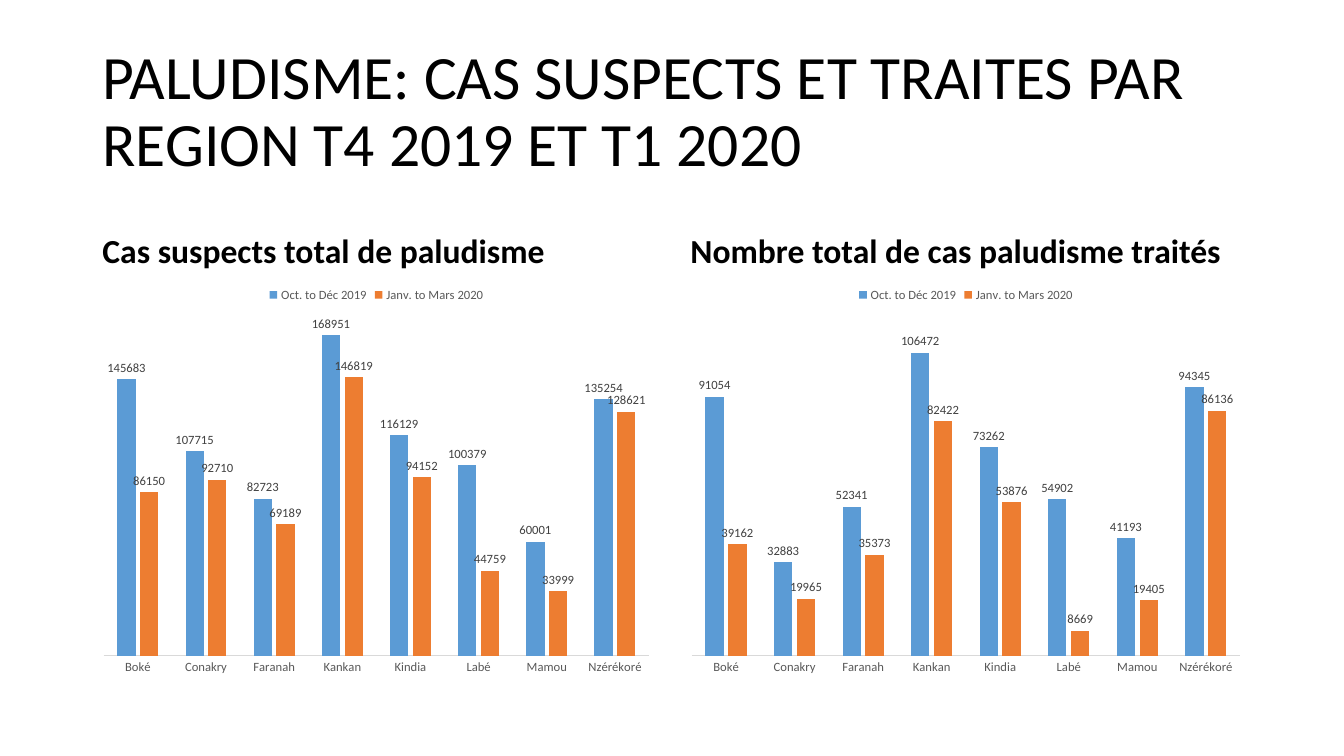
from dataclasses import dataclass

from pptx import Presentation
from pptx.chart.data import CategoryChartData
from pptx.dml.color import RGBColor
from pptx.enum.chart import XL_CHART_TYPE, XL_LABEL_POSITION, XL_LEGEND_POSITION, XL_TICK_MARK
from pptx.enum.text import MSO_ANCHOR, MSO_AUTO_SIZE, PP_ALIGN
from pptx.util import Emu, Pt


@dataclass(frozen=True)
class Theme:
    font: str = "Calibri"
    black: str = "000000"
    label: str = "404040"
    axis: str = "595959"
    line: str = "D9D9D9"
    bars: tuple = ("5B9BD5", "ED7D31")
    title_size: int = 44
    heading_size: int = 24
    chart_size: int = 10
    small_size: int = 9


THEME = Theme()
PX = 9525
REGIONS = ("Boké", "Conakry", "Faranah", "Kankan", "Kindia", "Labé", "Mamou", "Nzérékoré")
PERIODS = ("Oct. to Déc 2019", "Janv. to Mars 2020")
TITLE = "PALUDISME: CAS SUSPECTS ET TRAITES PAR REGION T4 2019 ET T1 2020"
PANELS = (
    (1, 88, 541, "Cas suspects total de paludisme", 180000, (
        (145683, 107715, 82723, 168951, 116129, 100379, 60001, 135254),
        (86150, 92710, 69189, 146819, 94152, 44759, 33999, 128621))),
    (3, 648, 544, "Nombre total de cas paludisme traités", 120000, (
        (91054, 32883, 52341, 106472, 73262, 54902, 41193, 94345),
        (39162, 19965, 35373, 82422, 53876, 8669, 19405, 86136))),
)


def px(*lengths):
    return [Emu(n * PX) for n in lengths]


def set_font(font, size, color, bold=False):
    font.name = THEME.font
    font.size = Pt(size)
    font.bold = bold
    font.color.rgb = RGBColor.from_string(color)


def fill_placeholder(sp, box, text, size, anchor, bold=False, before=0):
    sp.left, sp.top, sp.width, sp.height = px(*box)
    tf = sp.text_frame
    tf.text = text
    tf.word_wrap = True
    tf.auto_size = MSO_AUTO_SIZE.NONE
    tf.vertical_anchor = anchor
    p = tf.paragraphs[0]
    p.alignment = PP_ALIGN.LEFT
    p.line_spacing = 0.9
    p.space_before = Pt(before)
    set_font(p.font, size, THEME.black, bold)


def style_axes(chart, top):
    value = chart.value_axis
    value.minimum_scale, value.maximum_scale = 0, top
    value.has_major_gridlines = False
    value.visible = False
    category = chart.category_axis
    category.major_tick_mark = category.minor_tick_mark = XL_TICK_MARK.NONE
    category.format.line.color.rgb = RGBColor.from_string(THEME.line)
    category.format.line.width = Pt(0.75)
    set_font(category.tick_labels.font, THEME.small_size, THEME.axis)


def style_series(series, color):
    series.format.fill.solid()
    series.format.fill.fore_color.rgb = RGBColor.from_string(color)
    series.invert_if_negative = False
    labels = series.data_labels
    labels.show_value = True
    labels.position = XL_LABEL_POSITION.OUTSIDE_END
    set_font(labels.font, THEME.small_size, THEME.label)


def add_column_chart(s, box, top, values):
    data = CategoryChartData()
    data.categories = REGIONS
    for period, counts in zip(PERIODS, values):
        data.add_series(period, counts)
    chart = s.shapes.add_chart(XL_CHART_TYPE.COLUMN_CLUSTERED, *px(*box), data).chart
    chart.has_title = False
    set_font(chart.font, THEME.chart_size, THEME.black)
    chart.has_legend = True
    chart.legend.position = XL_LEGEND_POSITION.TOP
    chart.legend.include_in_layout = False
    set_font(chart.legend.font, THEME.small_size, THEME.axis)
    style_axes(chart, top)
    plot = chart.plots[0]
    plot.vary_by_categories = False
    plot.gap_width, plot.overlap = 150, -25
    for series, color in zip(plot.series, THEME.bars):
        style_series(series, color)


def main():
    prs = Presentation()
    prs.slide_width, prs.slide_height = px(1280, 720)
    s = prs.slides.add_slide(prs.slide_layouts.get_by_name("Comparison"))
    holders = {sp.placeholder_format.idx: sp for sp in s.placeholders}
    fill_placeholder(holders[0], (88, 38, 1104, 139), TITLE,
                     THEME.title_size, MSO_ANCHOR.MIDDLE)
    for idx, left, width, heading, top, values in PANELS:
        fill_placeholder(holders[idx], (left, 177, width, 86), heading,
                         THEME.heading_size, MSO_ANCHOR.BOTTOM, bold=True, before=10)
        content = holders[idx + 1].element
        content.getparent().remove(content)
        add_column_chart(s, (left, 263, width, 387), top, values)
    prs.save("out.pptx")


if __name__ == "__main__":
    main()
